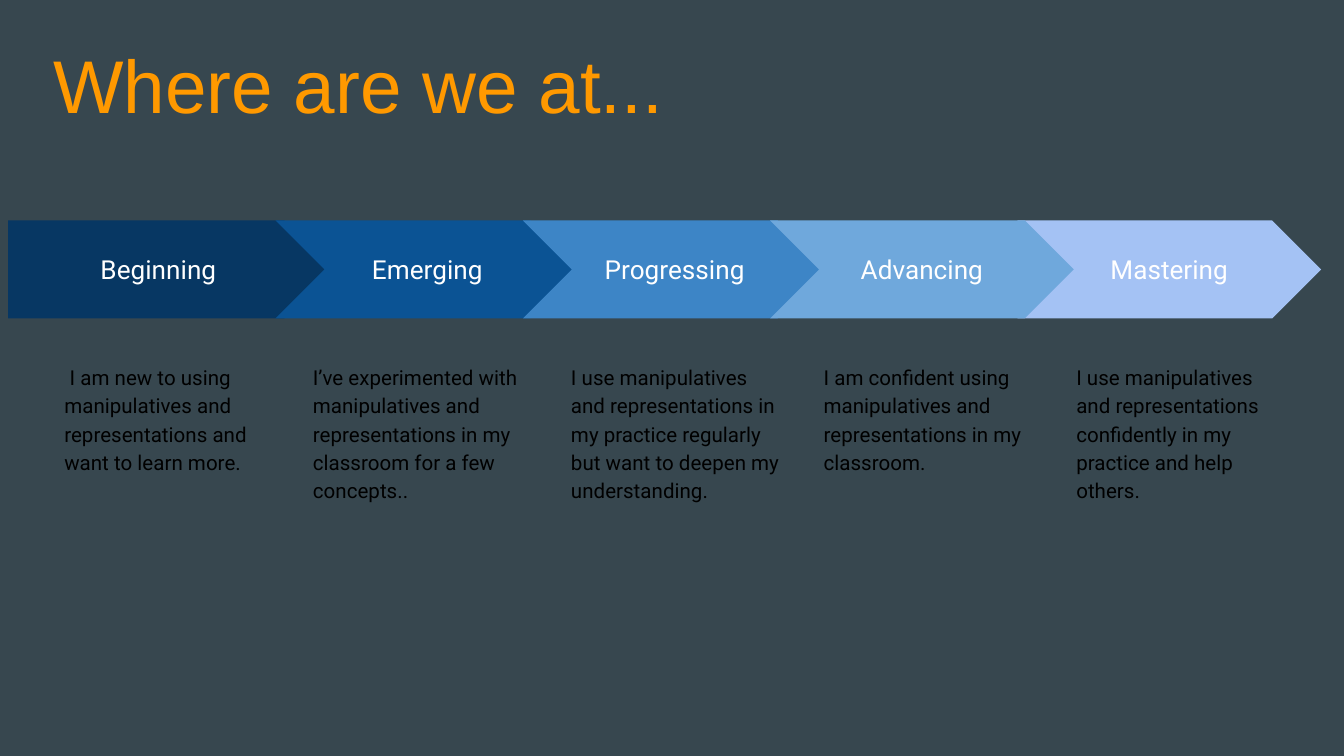
from dataclasses import dataclass

from pptx import Presentation
from pptx.dml.color import RGBColor
from pptx.enum.shapes import MSO_SHAPE as Shape
from pptx.enum.text import MSO_ANCHOR as Anchor, PP_ALIGN as Align
from pptx.util import Inches, Pt

SLATE = RGBColor(0x37, 0x47, 0x4F)
ORANGE = RGBColor(0xFF, 0x99, 0x00)
WHITE = RGBColor(0xFF, 0xFF, 0xFF)
BLACK = RGBColor(0x00, 0x00, 0x00)
NAVY = RGBColor(0x07, 0x37, 0x63)
DARK_BLUE = RGBColor(0x0B, 0x53, 0x94)
BLUE = RGBColor(0x3D, 0x85, 0xC6)
SKY = RGBColor(0x6F, 0xA8, 0xDC)
PALE_BLUE = RGBColor(0xA4, 0xC2, 0xF4)

SLIDE_WIDTH = Inches(10)
SLIDE_HEIGHT = SLIDE_WIDTH * 9 // 16
ARROW_TOP, ARROW_HEIGHT = 1.64, 0.73
FIRST_LEFT, FIRST_WIDTH = 0.06, 2.42
CHEVRON_LEFT, CHEVRON_WIDTH, CHEVRON_STEP = 2.05, 2.26, 1.84
NOTE_TOP, NOTE_WIDTH, NOTE_HEIGHT = 2.59, 1.78, 2.57


@dataclass
class Stage:
    column: int
    name: str
    color: RGBColor
    note_left: float
    note: str
    note_indent: float = 0


STAGES = [
    Stage(0, "Beginning", NAVY, 0.38,
          "I am new to using manipulatives and representations and want to learn more.", 0.04),
    Stage(1, "Emerging", DARK_BLUE, 2.23,
          "I’ve experimented with manipulatives and representations in my classroom for a few concepts.."),
    Stage(2, "Progressing", BLUE, 4.15,
          "I use manipulatives and representations in my practice regularly but want to deepen my understanding."),
    Stage(4, "Mastering", PALE_BLUE, 7.91,
          "I use manipulatives and representations confidently in my practice and help others."),
    Stage(3, "Advancing", SKY, 6.03,
          "I am confident using manipulatives and representations in my classroom."),
]


def write(shape, text, size, color, font_name="Roboto", line_spacing=None):
    frame = shape.text_frame
    frame.word_wrap = True
    frame.margin_left = frame.margin_right = Inches(0.1)
    frame.margin_top = frame.margin_bottom = Inches(0.1)
    paragraph = frame.paragraphs[0]
    paragraph.text = text
    paragraph.line_spacing = line_spacing
    paragraph.font.name = font_name
    paragraph.font.size = Pt(size)
    paragraph.font.color.rgb = color
    return paragraph


def add_title(slide, box):
    title = slide.shapes.add_textbox(*map(Inches, box))
    write(title, "Where are we at...", 40, ORANGE, "Arial", 1.15)


def add_arrow(shapes, stage, box):
    preset = Shape.CHEVRON if stage.column else Shape.PENTAGON
    arrow = shapes.add_shape(preset, *map(Inches, box))
    arrow.adjustments[0] = 0.5
    arrow.shadow.inherit = False
    arrow.fill.solid()
    arrow.fill.fore_color.rgb = stage.color
    arrow.line.fill.background()
    arrow.text_frame.vertical_anchor = Anchor.MIDDLE
    write(arrow, stage.name, 14, WHITE).alignment = Align.CENTER


def add_note(shapes, stage, box):
    note = shapes.add_textbox(*map(Inches, box))
    paragraph = write(note, stage.note, 11, BLACK, line_spacing=1.15)
    if stage.note_indent:
        properties = paragraph._p.get_or_add_pPr()
        properties.set("marL", "0")
        properties.set("indent", str(Inches(stage.note_indent)))


def add_stage(slide, stage):
    shapes = slide.shapes.add_group_shape().shapes
    if stage.column:
        left = CHEVRON_LEFT + CHEVRON_STEP * (stage.column - 1)
        width = CHEVRON_WIDTH
    else:
        left, width = FIRST_LEFT, FIRST_WIDTH
    add_arrow(shapes, stage, (left, ARROW_TOP, width, ARROW_HEIGHT))
    add_note(shapes, stage, (stage.note_left, NOTE_TOP, NOTE_WIDTH, NOTE_HEIGHT))


def main():
    presentation = Presentation()
    presentation.slide_width = SLIDE_WIDTH
    presentation.slide_height = SLIDE_HEIGHT
    slide = presentation.slides.add_slide(presentation.slide_layouts[6])
    slide.background.fill.solid()
    slide.background.fill.fore_color.rgb = SLATE
    add_title(slide, (0.3, 0.09, 9.3, 0.63))
    for stage in STAGES:
        add_stage(slide, stage)
    presentation.save("out.pptx")


if __name__ == "__main__":
    main()
